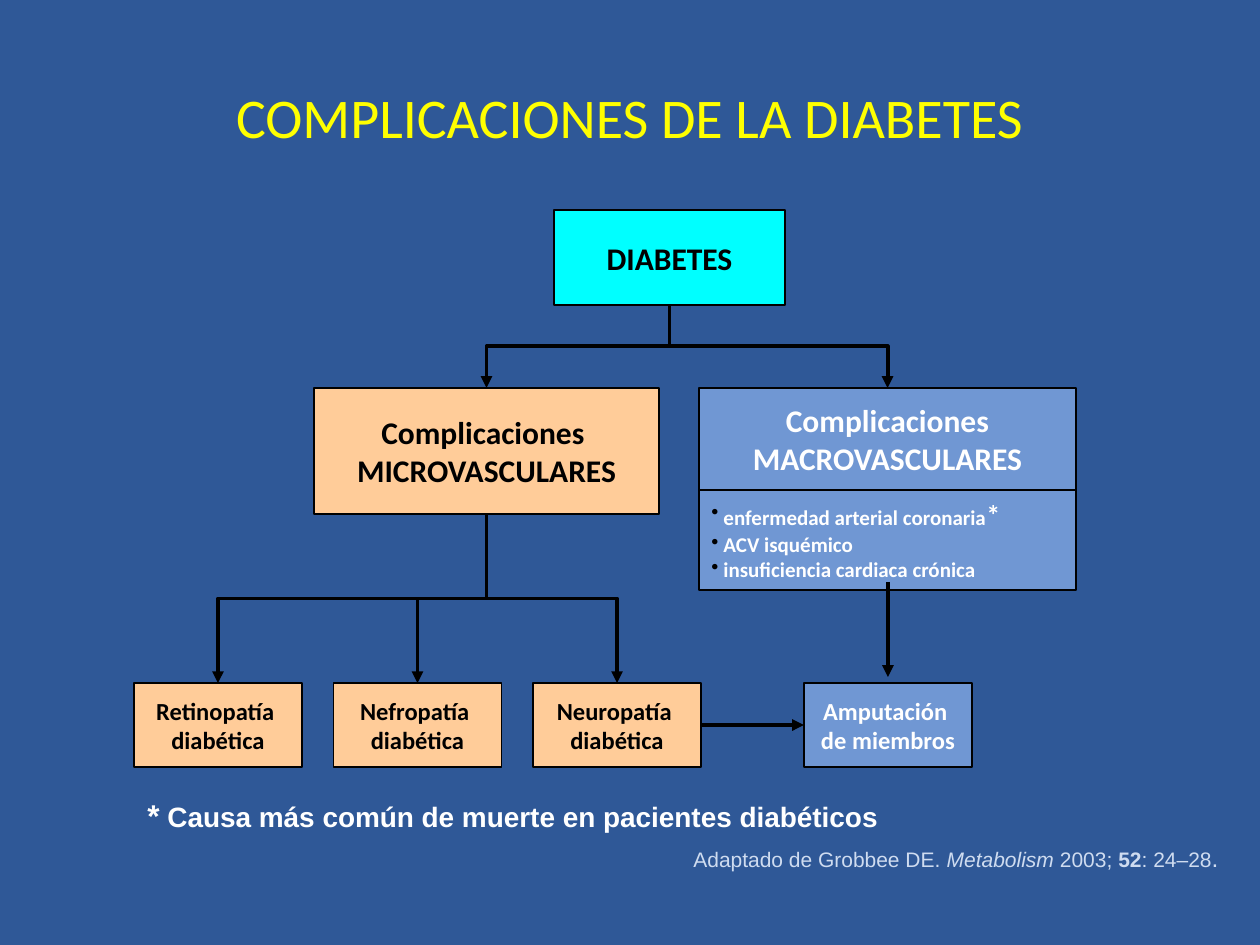
from dataclasses import dataclass
from typing import Any

from lxml import etree
from pptx import Presentation
from pptx import util as u
from pptx.dml.color import RGBColor
from pptx.enum import shapes, text
from pptx.oxml import ns

NAVY = RGBColor(0x2F, 0x58, 0x97)
CYAN = RGBColor(0x00, 0xFF, 0xFF)
PEACH = RGBColor(0xFF, 0xCC, 0x99)
BLUE = RGBColor(0x70, 0x97, 0xD3)
PALE = RGBColor(0xCF, 0xDC, 0xF0)
YELLOW = RGBColor(0xFF, 0xFF, 0x00)
BLACK = RGBColor(0x00, 0x00, 0x00)
WHITE = RGBColor(0xFF, 0xFF, 0xFF)

LEFT, CENTER, RIGHT = text.PP_ALIGN.LEFT, text.PP_ALIGN.CENTER, text.PP_ALIGN.RIGHT
TOP, LEFT_SIDE, BOTTOM, RIGHT_SIDE = range(4)


def px(length):
    return u.Emu(round(length * 914400 / 126))


@dataclass
class Chart:
    """Draws boxes, labels and arrows of a flow chart on one slide."""

    slide: Any
    heading_font: str = "Calibri"
    note_font: str = "Arial"
    border: float = 0.75
    stroke: float = 2.25

    def add_lines(self, shape, lines, font, color, align=CENTER, wrap=False, bullet=None):
        frame = shape.text_frame
        frame.word_wrap = wrap
        for index, spans in enumerate(lines):
            para = frame.paragraphs[0] if index == 0 else frame.add_paragraph()
            para.alignment = align
            if bullet:
                props = para._p.get_or_add_pPr()
                tint = etree.SubElement(props, ns.qn("a:buClr"))
                etree.SubElement(tint, ns.qn("a:srgbClr"), val=str(BLACK))
                etree.SubElement(props, ns.qn("a:buChar"), char=bullet)
            for words, size, bold, italic in spans:
                span = para.add_run()
                span.text = words
                span.font.name = font
                span.font.size = u.Pt(size)
                span.font.bold = bold
                span.font.italic = italic
                span.font.color.rgb = color

    def box(self, place, fill, color, lines, align=CENTER, bullet=None):
        box = self.slide.shapes.add_shape(
            shapes.MSO_SHAPE.RECTANGLE, *map(px, place))
        box.shadow.inherit = False
        box.fill.solid()
        box.fill.fore_color.rgb = fill
        box.line.color.rgb = BLACK
        box.line.width = u.Pt(self.border)
        box.text_frame.vertical_anchor = text.MSO_ANCHOR.MIDDLE
        self.add_lines(box, lines, self.heading_font, color, align, bullet=bullet)
        return box

    def label(self, place, lines, font, color, align=LEFT, wrap=False,
              anchor=text.MSO_ANCHOR.TOP):
        label = self.slide.shapes.add_textbox(*map(px, place))
        label.text_frame.vertical_anchor = anchor
        self.add_lines(label, lines, font, color, align, wrap)

    def arrow(self, start, end, kind=shapes.MSO_CONNECTOR.STRAIGHT):
        line = self.slide.shapes.add_connector(kind, *map(px, (*start, *end)))
        line.line.color.rgb = BLACK
        line.line.width = u.Pt(self.stroke)
        etree.SubElement(line.line._get_or_add_ln(), ns.qn("a:tailEnd"), type="triangle")
        etree.SubElement(line._element.spPr, ns.qn("a:effectLst"))
        return line

    def join(self, source, target):
        line = self.arrow((0, 0), (0, 0))
        line.begin_connect(source, RIGHT_SIDE)
        line.end_connect(target, LEFT_SIDE)

    def branch(self, parent, child):
        line = self.arrow((0, 0), (0, 0), shapes.MSO_CONNECTOR.ELBOW)
        line.begin_connect(parent, BOTTOM)
        line.end_connect(child, TOP)
        run, drop = line.end_x - line.begin_x, line.end_y - line.begin_y
        middle_x = (line.begin_x + line.end_x) // 2
        middle_y = (line.begin_y + line.end_y) // 2
        line.left, line.top = middle_x - drop // 2, middle_y - abs(run) // 2
        line.width, line.height = drop, abs(run)
        frame = line._element.spPr.find(ns.qn("a:xfrm"))
        frame.set("rot", "16200000" if run > 0 else "5400000")
        frame.set("flipH", "1" if run > 0 else "0")
        frame.set("flipV", "0")


def bold_lines(size, *lines):
    return [[(line, size, True, False)] for line in lines]


def main():
    deck = Presentation()
    deck.slide_width, deck.slide_height = px(1260), px(945)
    page = deck.slides.add_slide(deck.slide_layouts[6])
    page.background.fill.solid()
    page.background.fill.fore_color.rgb = NAVY
    chart = Chart(page)

    chart.label((63, 38, 1134, 157),
                [[("COMPLICACIONES DE LA DIABETES", 32, False, False)]],
                chart.heading_font, YELLOW, CENTER, True, text.MSO_ANCHOR.MIDDLE)

    diabetes = chart.box((554, 210, 231, 95), CYAN, BLACK, bold_lines(18, "DIABETES"))
    micro = chart.box((314, 388, 345, 126), PEACH, BLACK,
                      bold_lines(18, "Complicaciones ", "MICROVASCULARES"))
    macro = chart.box((699, 388, 377, 102), BLUE, WHITE,
                      bold_lines(18, "Complicaciones", "MACROVASCULARES"))
    diseases = bold_lines(12, " enfermedad arterial coronaria", " ACV isquémico",
                          " insuficiencia cardiaca crónica")
    diseases[0].append(("*", 16, True, False))
    chart.box((699, 490, 377, 100), BLUE, WHITE, diseases, LEFT, "•")

    for child in (micro, macro):
        chart.branch(diabetes, child)
    for index, name in enumerate(("Retinopatía ", "Nefropatía ", "Neuropatía ")):
        leaf = chart.box((134 + 199.5 * index, 683, 168, 84), PEACH, BLACK,
                         bold_lines(14, name, "diabética"))
        chart.branch(micro, leaf)
    amputation = chart.box((804, 683, 168, 84), BLUE, WHITE,
                           bold_lines(14, "Amputación ", "de miembros"))
    chart.join(leaf, amputation)
    chart.arrow((888, 582), (888, 677))

    chart.label((135, 790, 765, 52),
                [[("*", 18, True, False),
                  (" Causa más común de muerte en pacientes diabéticos", 16, True, False)]],
                chart.note_font, WHITE)
    chart.label((678, 837, 553, 43),
                [[("Adaptado de Grobbee DE. ", 12, False, False),
                  ("Metabolism", 12, False, True),
                  (" 2003; ", 12, False, False),
                  ("52", 12, True, False),
                  (": 24–28", 12, False, False),
                  (".", 14, False, False)]],
                chart.note_font, PALE, RIGHT)
    deck.save("out.pptx")


if __name__ == "__main__":
    main()
